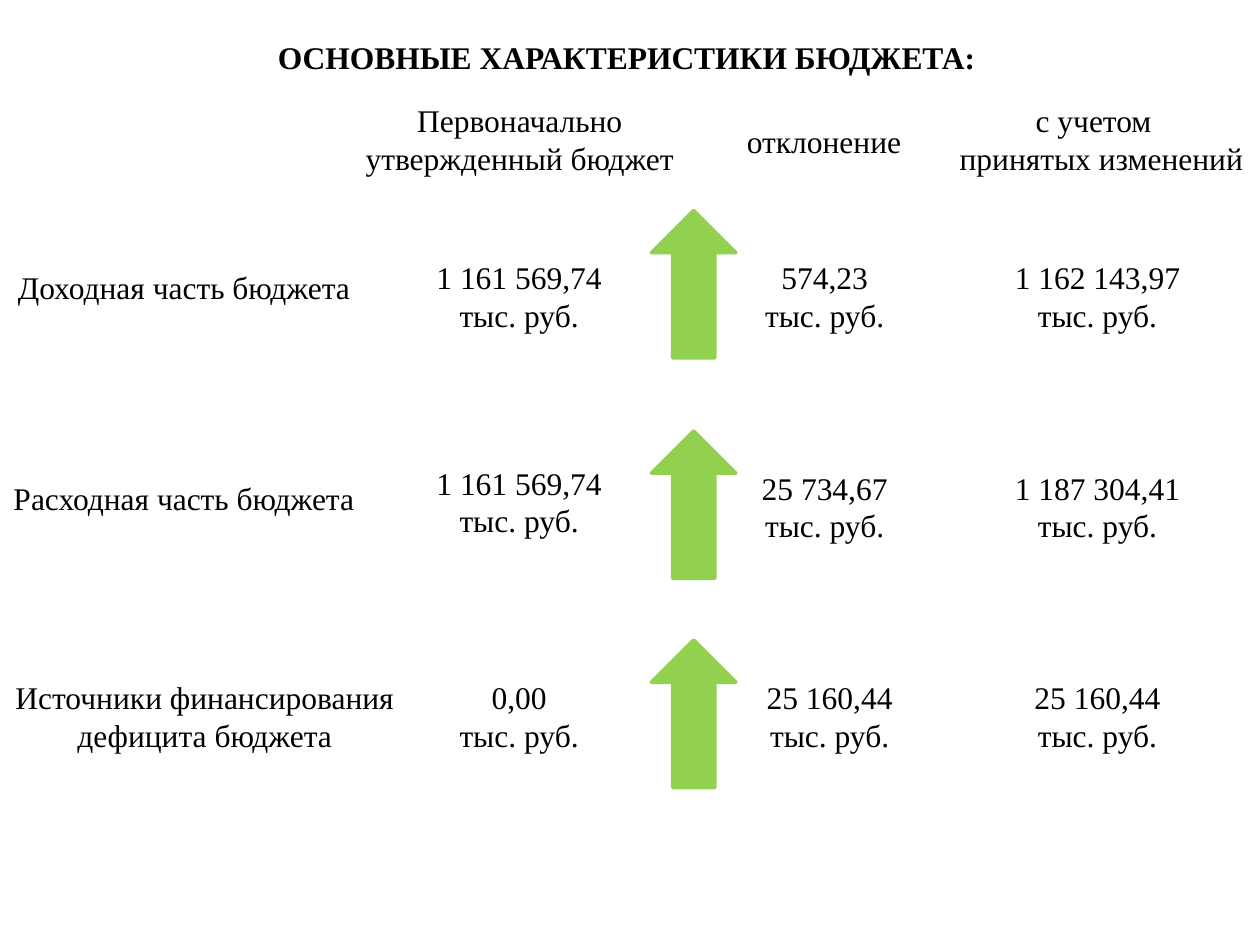
import pptx
import pptx.util
import pptx.dml.color
import pptx.enum.shapes
import pptx.enum.text

Inches = pptx.util.Inches
Pt = pptx.util.Pt
RGBColor = pptx.dml.color.RGBColor
Shape = pptx.enum.shapes.MSO_SHAPE
Align = pptx.enum.text.PP_ALIGN
Anchor = pptx.enum.text.MSO_ANCHOR
Fit = pptx.enum.text.MSO_AUTO_SIZE

BLACK = RGBColor(0x00, 0x00, 0x00)
GREEN = RGBColor(0x92, 0xD0, 0x50)
UNIT = "тыс. руб."


class Page:
    font = "Times New Roman"
    size = Pt(18)

    def __init__(self, slide):
        self.slide = slide

    def place(self, shape, left, top, width, height):
        shape.left, shape.top = Inches(left), Inches(top)
        shape.width, shape.height = Inches(width), Inches(height)

    def fill(self, frame, lines, bold=False, wrap=True):
        frame.text = "\n".join(lines)
        frame.word_wrap = wrap
        frame.auto_size = Fit.SHAPE_TO_FIT_TEXT
        frame.vertical_anchor = Anchor.TOP
        for para in frame.paragraphs:
            para.alignment = Align.CENTER
            para.font.name = self.font
            para.font.size = self.size
            para.font.bold = bold
            para.font.color.rgb = BLACK

    def title(self, text, *box):
        shape = self.slide.shapes.title
        self.place(shape, *box)
        self.fill(shape.text_frame, [text], bold=True, wrap=False)

    def label(self, lines, left, top, width, height=0.71):
        box = self.slide.shapes.add_textbox(
            Inches(left), Inches(top), Inches(width), Inches(height))
        self.fill(box.text_frame, lines)

    def arrow(self, left, top, width, height):
        shape = self.slide.shapes.add_shape(
            Shape.DOWN_ARROW, Inches(left), Inches(top), Inches(width), Inches(height))
        shape.rotation = 180
        shape.shadow.inherit = False
        shape.fill.solid()
        shape.fill.fore_color.rgb = GREEN
        shape.line.color.rgb = GREEN
        shape.line.width = Pt(2)


ROWS = [
    (("Доходная часть бюджета", 2.08, 2.92, 0.4), 1.67,
     [("1 161 569,74", 2), ("574,23", 2), ("1 162 143,97", 2)], 1.25),
    (("Расходная часть бюджета", 3.75, 2.92, 0.4), 3.42,
     [("1 161 569,74", 3.63), ("25 734,67", 3.67), ("1 187 304,41", 3.67)], 1.25),
    (("Источники финансирования дефицита бюджета", 5.33, 3.25, 0.71), 5.08,
     [("0,00", 5.33), ("25 160,44", 5.33), ("25 160,44", 5.33)], 1.33),
]


def main():
    deck = pptx.Presentation()
    deck.slide_width, deck.slide_height = Inches(10), Inches(7.5)
    page = Page(deck.slides.add_slide(deck.slide_layouts[5]))

    page.title("ОСНОВНЫЕ ХАРАКТЕРИСТИКИ БЮДЖЕТА:", 2.08, 0.25, 5.79, 0.4)
    page.label(["Первоначально утвержденный бюджет"], 2.75, 0.75, 2.75)
    page.label(["отклонение"], 5.75, 0.92, 1.58, 0.4)
    page.label(["с учетом ", " принятых изменений"], 7.42, 0.75, 2.58)

    for (name, top, width, height), tip, sums, mid in ROWS:
        page.label([name], 0, top, width, height)
        page.arrow(5.17, tip, 0.67, 1.17)
        cols = [(3.33, 1.58), (5.92, mid), (7.92, 1.58)]
        for (left, wide), (value, level) in zip(cols, sums):
            page.label([value, UNIT], left, level, wide)

    deck.save("out.pptx")


if __name__ == "__main__":
    main()
